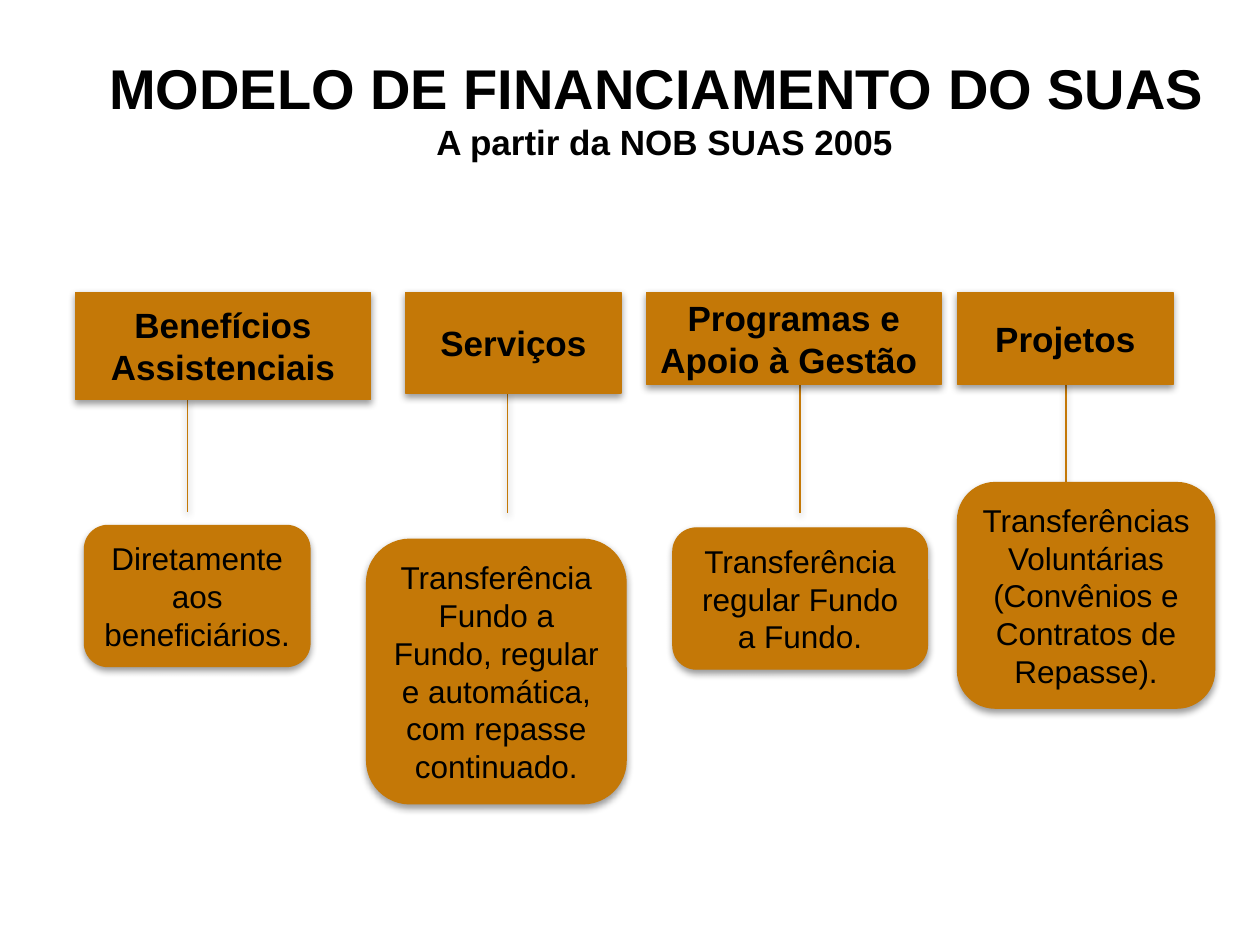
from dataclasses import dataclass

from lxml.etree import SubElement
from pptx import Presentation
from pptx.dml.color import RGBColor
from pptx.enum.shapes import MSO_CONNECTOR as Connector, MSO_SHAPE as Shape
from pptx.enum.text import MSO_ANCHOR as Anchor, MSO_AUTO_SIZE as AutoSize, PP_ALIGN as Align
from pptx.oxml.ns import qn
from pptx.util import Pt


@dataclass(frozen=True)
class Theme:
    font: str = "Arial"
    ink: RGBColor = RGBColor.from_string("000000")
    ochre: RGBColor = RGBColor.from_string("C47807")
    title: int = 32
    heading: int = 20
    body: int = 18
    line: float = 0.75


@dataclass(frozen=True)
class Column:
    """A funding type above its transfer mode; boxes are left, top, width, height."""
    heading: str
    heading_box: tuple
    detail: str
    detail_box: tuple
    stem_x: float
    stem_end: float


THEME = Theme()
ROW_TOP = 167.04
COLUMNS = [
    Column("Benefícios Assistenciais", (43.2, ROW_TOP, 168.48, 61.2),
           "Diretamente aos beneficiários.", (48.24, 300.24, 128.88, 80.64),
           107.28, 292.32),
    Column("Serviços", (231.84, ROW_TOP, 123.12, 57.6),
           "Transferência Fundo a Fundo, regular e automática, com repasse continuado.",
           (209.52, 308.16, 148.32, 151.2), 290.16, 293.04),
    Column("Programas e Apoio à Gestão ", (369.36, ROW_TOP, 168.48, 52.56),
           "Transferência regular Fundo a Fundo.", (384.48, 301.68, 145.44, 80.64),
           457.2, 293.04),
    Column("Projetos", (547.2, ROW_TOP, 123.12, 52.56),
           "Transferências Voluntárias (Convênios e Contratos de Repasse).",
           (547.2, 275.76, 146.88, 128.88), 609.12, 293.04),
]


def add_soft_shadow(shape):
    effects = SubElement(shape._element.spPr, qn("a:effectLst"))
    shadow = SubElement(effects, qn("a:outerShdw"), blurRad=str(Pt(4.1)),
                        dist=str(Pt(2)), dir="5400000", rotWithShape="0")
    color = SubElement(shadow, qn("a:srgbClr"), val="000000")
    SubElement(color, qn("a:alpha"), val="40000")


def style_line(line):
    line.color.rgb = THEME.ochre
    line.width = Pt(THEME.line)


def format_paragraph(para, size, bold):
    para.alignment = Align.CENTER
    for span in para.runs:
        span.font.name = THEME.font
        span.font.size = Pt(size)
        span.font.bold = bold
        span.font.color.rgb = THEME.ink


def add_title(page, lines):
    title = page.shapes.title
    title.left, title.top, title.width, title.height = map(Pt, (48.24, 38.88, 663.12, 45.36))
    frame = title.text_frame
    frame.text = "\n".join(text for text, size in lines)
    frame.word_wrap = True
    frame.auto_size = AutoSize.NONE
    frame.vertical_anchor = Anchor.MIDDLE
    for para, (text, size) in zip(frame.paragraphs, lines):
        para.space_before = Pt(0)
        format_paragraph(para, size, True)


def add_box(page, kind, bounds, text, size, bold):
    box = page.shapes.add_shape(kind, *map(Pt, bounds))
    box.fill.solid()
    box.fill.fore_color.rgb = THEME.ochre
    style_line(box.line)
    add_soft_shadow(box)
    frame = box.text_frame
    frame.word_wrap = True
    frame.vertical_anchor = Anchor.MIDDLE
    frame.text = text
    format_paragraph(frame.paragraphs[0], size, bold)


def add_stem(page, x, top, bottom):
    stem = page.shapes.add_connector(Connector.STRAIGHT, Pt(x), Pt(top), Pt(x), Pt(bottom))
    style_line(stem.line)
    add_soft_shadow(stem)


def add_column(page, column):
    left, top, width, height = column.heading_box
    add_stem(page, column.stem_x, top + height, column.stem_end)
    add_box(page, Shape.RECTANGLE, column.heading_box, column.heading, THEME.heading, True)
    add_box(page, Shape.ROUNDED_RECTANGLE, column.detail_box, column.detail, THEME.body, False)


def main():
    deck = Presentation()
    deck.slide_width, deck.slide_height = Pt(720), Pt(540)
    page = deck.slides.add_slide(deck.slide_layouts.get_by_name("Title Only"))
    add_title(page, [("MODELO DE FINANCIAMENTO DO SUAS ", THEME.title),
                     ("A partir da NOB SUAS 2005", THEME.heading)])
    for column in COLUMNS:
        add_column(page, column)
    deck.save("out.pptx")


if __name__ == "__main__":
    main()
